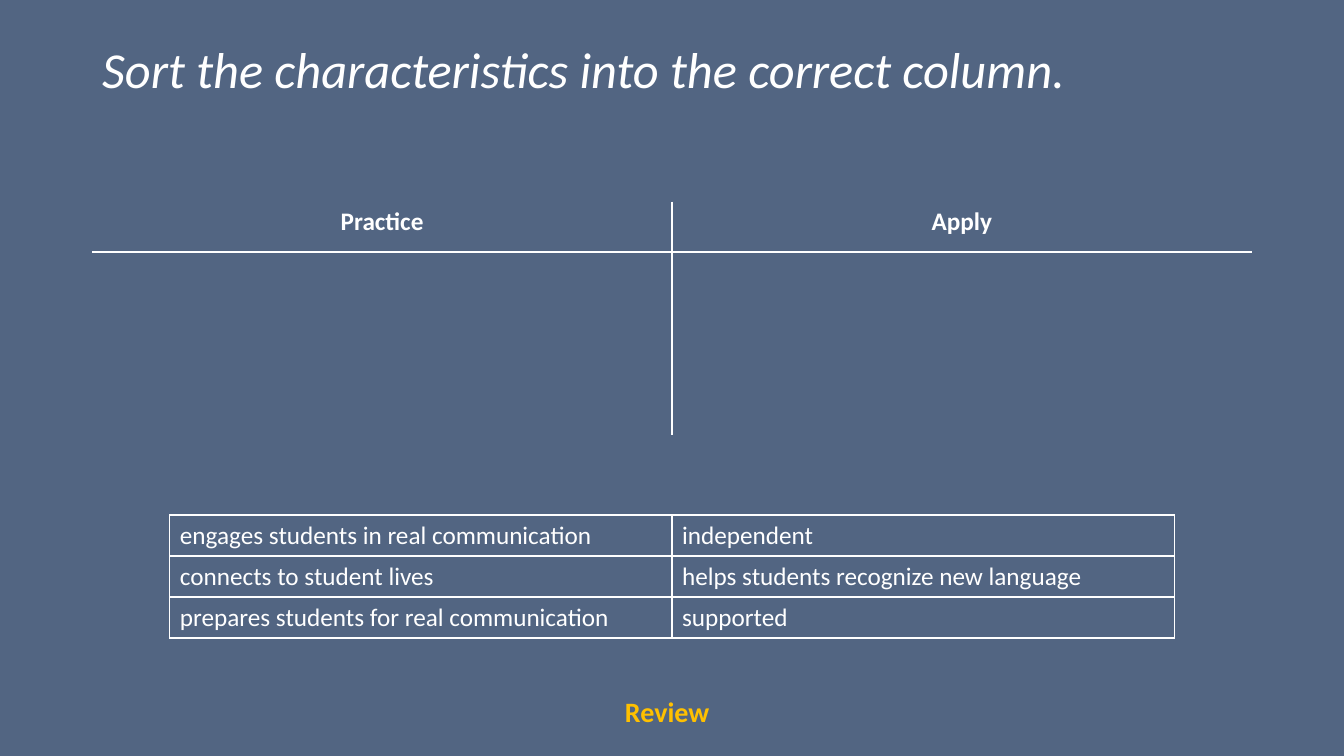
from lxml.etree import SubElement
from pptx import Presentation
from pptx.dml.color import RGBColor
from pptx.enum.text import MSO_ANCHOR, PP_ALIGN
from pptx.oxml.ns import qn
from pptx.util import Inches, Pt

BLUE = RGBColor(0x52, 0x65, 0x82)
WHITE = RGBColor(0xFF, 0xFF, 0xFF)
GOLD = RGBColor(0xFF, 0xC0, 0x00)
WIDE, HIGH = 13.33, 7.5

TRAITS = [
    ["engages students in real communication", "independent"],
    ["connects to student lives", "helps students recognize new language"],
    ["prepares students for real communication", "supported"],
]


def style(para, size, color=WHITE, **extra):
    look = {"name": "Calibri", "size": Pt(size), **extra}
    for key, value in look.items():
        setattr(para.font, key, value)
    para.font.color.rgb = color


def add_label(slide, box, text, size, color=WHITE, wrap=True, **extra):
    frame = slide.shapes.add_textbox(*map(Inches, box)).text_frame
    frame.word_wrap = wrap
    frame.vertical_anchor = MSO_ANCHOR.TOP
    para = frame.paragraphs[0]
    para.line_spacing = 0.9
    para.text = text
    style(para, size, color, **extra)


def add_edges(cell, sides):
    props = cell._tc.get_or_add_tcPr()
    for side in "LRTB":
        line = SubElement(props, qn(f"a:ln{side}"), w=str(Pt(1)))
        if side in sides:
            fill = SubElement(line, qn("a:solidFill"))
            SubElement(fill, qn("a:srgbClr"), val=str(WHITE))
        else:
            SubElement(line, qn("a:noFill"))


def add_grid(slide, box, rows, heights, framed, align, bold):
    left, top, width, _ = box
    count = len(rows[0])
    table = slide.shapes.add_table(
        len(rows), count, *map(Inches, (left, top, width, sum(heights)))
    ).table
    for flag in ("first_row", "horz_banding"):
        setattr(table, flag, False)
    for col in table.columns:
        col.width = Inches(width / count)
    for r, (words, height) in enumerate(zip(rows, heights)):
        table.rows[r].height = Inches(height)
        for c, text in enumerate(words):
            cell = table.cell(r, c)
            inner = {"L": c > 0, "R": c < count - 1,
                     "T": r > 0, "B": r < len(rows) - 1}
            add_edges(cell, [s for s in inner if framed or inner[s]])
            cell.fill.background()
            para = cell.text_frame.paragraphs[0]
            para.text = text
            para.alignment = align
            style(para, 18, bold=bold)


def add_chart(slide, box):
    head = 0.5
    add_grid(slide, box, [["Practice", "Apply"], ["", ""]],
             [head, box[3] - head], False, PP_ALIGN.CENTER, True)


def add_bank(slide, box):
    heights = [box[3] / len(TRAITS)] * len(TRAITS)
    add_grid(slide, box, TRAITS, heights, True, PP_ALIGN.LEFT, False)


def centre(width, top, height):
    return (WIDE - width) / 2, top, width, height


def main():
    deck = Presentation()
    deck.slide_width, deck.slide_height = Inches(WIDE), Inches(HIGH)
    slide = deck.slides.add_slide(deck.slide_layouts[6])
    slide.background.fill.solid()
    slide.background.fill.fore_color.rgb = BLUE
    add_label(slide, centre(1.13, 6.88, 0.42), "Review", 20, GOLD,
              wrap=False, bold=True)
    add_label(slide, centre(11.5, 0.4, 1.45),
              "Sort the characteristics into the correct column.",
              36, italic=True)
    add_chart(slide, centre(11.5, 2, 2.32))
    add_bank(slide, centre(9.96, 5.11, 1.22))
    deck.save("out.pptx")


if __name__ == "__main__":
    main()
